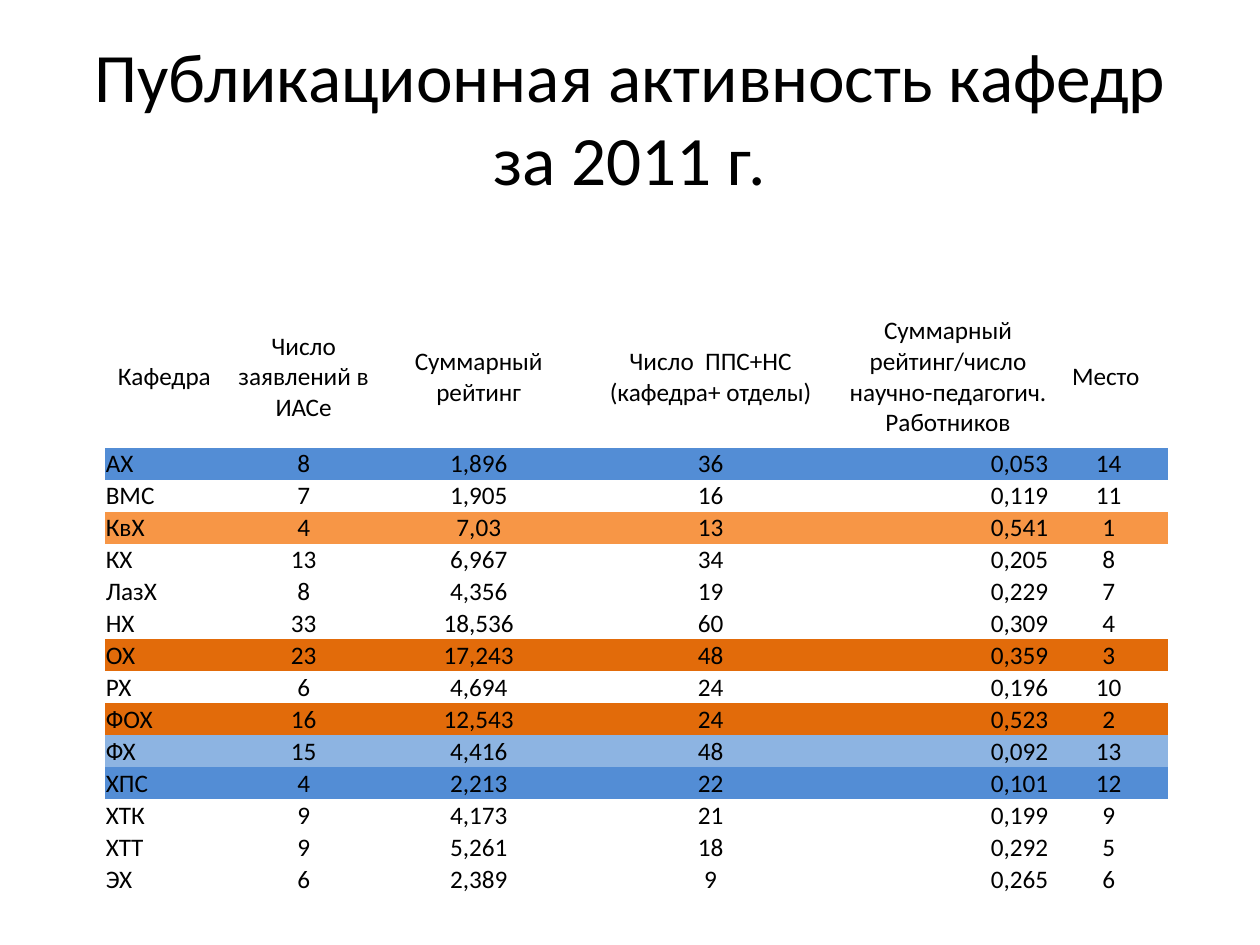
"""Build a slide ranking university departments by publication activity."""
from typing import NamedTuple, Optional

from pptx import Presentation
from pptx import util as u
from pptx.dml.color import RGBColor
from pptx.enum import text

BLACK = RGBColor(0x00, 0x00, 0x00)
BLUE = RGBColor(0x53, 0x8D, 0xD5)
LIGHT_BLUE = RGBColor(0x8D, 0xB4, 0xE2)
ORANGE = RGBColor(0xF7, 0x96, 0x46)
DARK_ORANGE = RGBColor(0xE2, 0x6B, 0x0A)

FONT = "Calibri"
CELL_SIZE = 14.4
NO_STYLE = "{2D5ABB26-0587-4C30-8999-92F81FD0307C}"
LEFT, CENTER, RIGHT = text.PP_ALIGN.LEFT, text.PP_ALIGN.CENTER, text.PP_ALIGN.RIGHT
MIDDLE, BOTTOM = text.MSO_ANCHOR.MIDDLE, text.MSO_ANCHOR.BOTTOM


class Column(NamedTuple):
    heading: str
    width: float
    align: text.PP_ALIGN = CENTER


class Department(NamedTuple):
    name: str
    claims: str
    rating: str
    staff: str
    ratio: str
    place: str
    fill: Optional[RGBColor] = None


COLUMNS = [
    Column("Кафедра", 0.95, LEFT),
    Column("Число заявлений в ИАСе", 1.26),
    Column("Суммарный рейтинг", 1.52),
    Column("Число  ППС+НС (кафедра+ отделы)", 2.16),
    Column("Суммарный рейтинг/число научно-педагогич. Работников", 1.61, RIGHT),
    Column("Место ", 0.94),
]

DEPARTMENTS = [
    Department("АХ", "8", "1,896", "36", "0,053", "14", BLUE),
    Department("ВМС", "7", "1,905", "16", "0,119", "11"),
    Department("КвХ", "4", "7,03", "13", "0,541", "1", ORANGE),
    Department("КХ", "13", "6,967", "34", "0,205", "8"),
    Department("ЛазХ", "8", "4,356", "19", "0,229", "7"),
    Department("НХ", "33", "18,536", "60", "0,309", "4"),
    Department("ОХ", "23", "17,243", "48", "0,359", "3", DARK_ORANGE),
    Department("РХ", "6", "4,694", "24", "0,196", "10"),
    Department("ФОХ", "16", "12,543", "24", "0,523", "2", DARK_ORANGE),
    Department("ФХ", "15", "4,416", "48", "0,092", "13", LIGHT_BLUE),
    Department("ХПС", "4", "2,213", "22", "0,101", "12", BLUE),
    Department("ХТК", "9", "4,173", "21", "0,199", "9"),
    Department("ХТТ", "9", "5,261", "18", "0,292", "5"),
    Department("ЭХ", "6", "2,389", "9", "0,265", "6"),
]


def write(tf, content: str, *, size: float = CELL_SIZE, align=CENTER) -> None:
    p = tf.paragraphs[0]
    p.alignment = align
    if not content:
        p._p.get_or_add_endParaRPr().set("sz", str(round(size * 100)))
        return
    r = p.add_run()
    r.text = content
    r.font.name = FONT
    r.font.size = u.Pt(size)
    r.font.color.rgb = BLACK


def fill_cell(cell, content: str, *, align=CENTER, anchor=BOTTOM,
              fill: Optional[RGBColor] = None) -> None:
    cell.margin_left = cell.margin_right = cell.margin_top = u.Inches(0.01)
    cell.margin_bottom = 0
    cell.vertical_anchor = anchor
    if fill is None:
        cell.fill.background()
    else:
        cell.fill.solid()
        cell.fill.fore_color.rgb = fill
    write(cell.text_frame, content, align=align)


def add_ranking(s) -> None:
    heights = [0.19, 1.13] + [0.23] * len(DEPARTMENTS)
    frame = s.shapes.add_table(len(heights), len(COLUMNS), u.Inches(0.83), u.Inches(2.17),
                               u.Inches(8.43), u.Inches(sum(heights)))
    table = frame.table
    table.first_row = table.horz_banding = False
    table._tbl.tblPr.find("{*}tableStyleId").text = NO_STYLE
    for row, height in zip(table.rows, heights):
        row.height = u.Inches(height)
    for i, column in enumerate(COLUMNS):
        table.columns[i].width = u.Inches(column.width)
        fill_cell(table.cell(0, i), "")
        fill_cell(table.cell(1, i), column.heading, anchor=MIDDLE)
        for j, dept in enumerate(DEPARTMENTS, start=2):
            fill_cell(table.cell(j, i), dept[i], align=column.align, fill=dept.fill)
    table.cell(0, 1).merge(table.cell(0, 3))


def main() -> None:
    prs = Presentation()
    prs.slide_width, prs.slide_height = u.Inches(10), u.Inches(7.5)
    s = prs.slides.add_slide(prs.slide_layouts[5])
    title = s.shapes.title
    title.left, title.top = u.Inches(0.5), u.Inches(0.3)
    title.width, title.height = u.Inches(9), u.Inches(1.25)
    title.text_frame.vertical_anchor = MIDDLE
    write(title.text_frame, "Публикационная активность кафедр за 2011 г.", size=39.6)
    add_ranking(s)
    prs.save("out.pptx")


if __name__ == "__main__":
    main()
